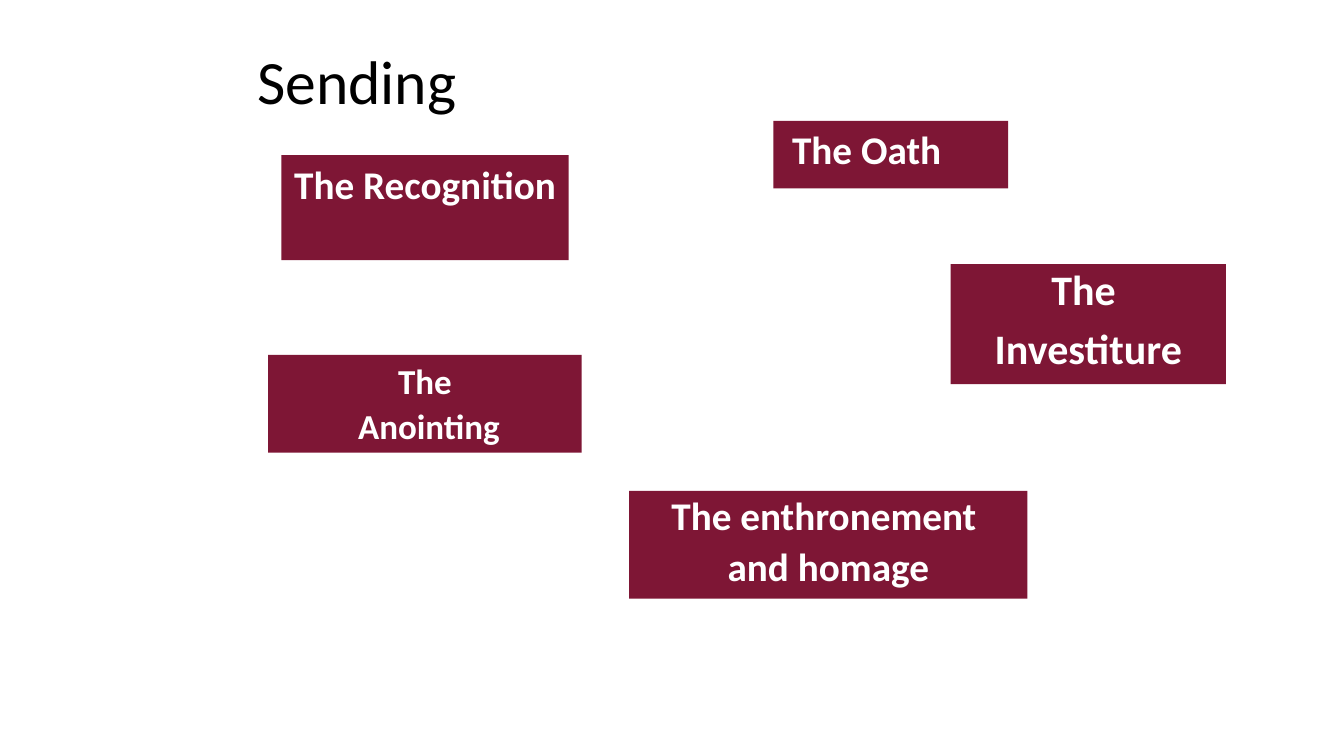
"""Build the slide of coronation steps under the title Sending."""
from dataclasses import dataclass

from pptx import Presentation
from pptx.dml.color import RGBColor
from pptx.enum.shapes import MSO_SHAPE
from pptx.enum.text import MSO_ANCHOR, MSO_AUTO_SIZE, PP_ALIGN
from pptx.util import Inches, Pt

RECT = MSO_SHAPE.RECTANGLE
TOP, MIDDLE = MSO_ANCHOR.TOP, MSO_ANCHOR.MIDDLE
LEFT, CENTER = PP_ALIGN.LEFT, PP_ALIGN.CENTER
FIXED = MSO_AUTO_SIZE.NONE


@dataclass(frozen=True)
class Theme:
    font: str = "Calibri"
    ink: RGBColor = RGBColor(0, 0, 0)
    paper: RGBColor = RGBColor(255, 255, 255)
    wine: RGBColor = RGBColor(0x7E, 0x16, 0x35)
    title: int = 44
    large: int = 30
    normal: int = 28
    small: int = 25
    gap: int = 10


class Deck:
    def __init__(self, theme):
        self.theme = theme
        self.show = Presentation()
        self.show.slide_width = Inches(13.33)
        self.show.slide_height = Inches(7.5)
        self.slide = self.show.slides.add_slide(self.show.slide_layouts[5])

    def add_text(self, para, text, size, color, bold):
        run = para.add_run()
        run.text = text
        font = run.font
        font.name, font.size, font.bold = self.theme.font, Pt(size), bold
        font.color.rgb = color

    def title(self, text, box):
        shape = self.slide.shapes.title
        shape.left, shape.top, shape.width, shape.height = map(Inches, box)
        frame = shape.text_frame
        frame.auto_size, frame.word_wrap = FIXED, True
        frame.vertical_anchor = MIDDLE
        para = frame.paragraphs[0]
        para.alignment, para.line_spacing = LEFT, 0.9
        self.add_text(para, text, self.theme.title, self.theme.ink, False)

    def card(self, box, lines, size, spaces, anchor=TOP, align=CENTER):
        theme = self.theme
        shape = self.slide.shapes.add_shape(RECT, *map(Inches, box))
        shape.shadow.inherit = False
        shape.fill.solid()
        shape.fill.fore_color.rgb = theme.wine
        shape.line.fill.background()
        frame = shape.text_frame
        frame.word_wrap, frame.vertical_anchor = True, anchor
        for i, (text, space) in enumerate(zip(lines, spaces)):
            para = frame.add_paragraph() if i else frame.paragraphs[0]
            para.alignment, para.line_spacing = align, space
            if i:
                para.space_before = Pt(theme.gap)
            self.add_text(para, text, size, theme.paper, True)


def main():
    theme = Theme()
    deck = Deck(theme)
    deck.title("Sending", (2.45, 0.11, 8.62, 1.45))
    deck.card((2.79, 1.54, 2.85, 1.04), ["The Recognition"],
              theme.normal, [1.0])
    deck.card((2.66, 3.52, 3.11, 0.97), ["The", " Anointing"],
              theme.small, [1.0, 0.7])
    deck.card((7.67, 1.2, 2.33, 0.67), [" The Oath"],
              theme.normal, [0.7], MIDDLE, LEFT)
    deck.card((6.24, 4.87, 3.95, 1.07), ["The enthronement ", "and homage"],
              theme.normal, [0.8, 0.8], MIDDLE)
    deck.card((9.43, 2.62, 2.73, 1.19), ["The ", "Investiture"],
              theme.large, [0.9, 0.9])
    deck.show.save("out.pptx")


if __name__ == "__main__":
    main()
